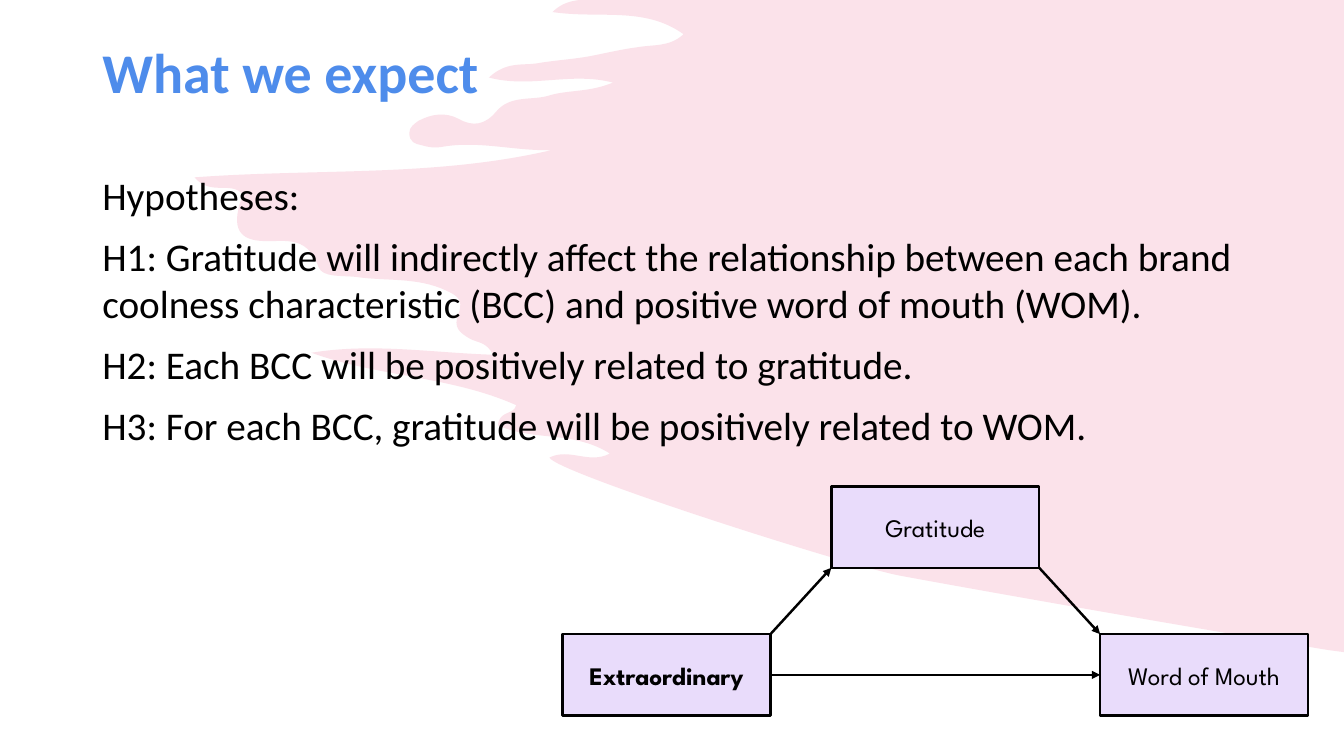
from dataclasses import dataclass

from lxml import etree
from pptx import Presentation
from pptx.dml.color import RGBColor
from pptx.enum.shapes import MSO_CONNECTOR, MSO_SHAPE
from pptx.enum.text import MSO_ANCHOR, MSO_AUTO_SIZE, PP_ALIGN
from pptx.oxml.ns import qn
from pptx.util import Inches, Pt

RECTANGLE, STRAIGHT = MSO_SHAPE.RECTANGLE, MSO_CONNECTOR.STRAIGHT
TOP, MIDDLE = MSO_ANCHOR.TOP, MSO_ANCHOR.MIDDLE
LEFT, CENTER = PP_ALIGN.LEFT, PP_ALIGN.CENTER
NO_FIT = MSO_AUTO_SIZE.NONE


@dataclass(frozen=True)
class Theme:
    heading: RGBColor = RGBColor(0x4E, 0x8C, 0xEB)
    ink: RGBColor = RGBColor(0, 0, 0)
    box: RGBColor = RGBColor(0xE9, 0xDC, 0xFB)
    brush: RGBColor = RGBColor(0xEE, 0x6E, 0x96)
    brush_alpha: int = 20000
    text_font: str = "Calibri"
    model_font: str = "League Spartan"
    heading_size: Pt = Pt(40)
    body_size: Pt = Pt(28)
    model_size: Pt = Pt(18)
    line: Pt = Pt(1.75)


theme = Theme()
prs = Presentation()
prs.slide_width, prs.slide_height = Inches(13.33), Inches(7.5)
COLUMN, ROW = prs.slide_width / 160, prs.slide_height / 90


def cells(left, top, width, height):
    """Turn a place on the 160 x 90 grid into slide lengths."""
    return (round(left * COLUMN), round(top * ROW),
            round(width * COLUMN), round(height * ROW))


def add_run(paragraph, text, font, size, color, bold=False):
    run = paragraph.add_run()
    run.text = text
    run.font.name, run.font.size, run.font.bold = font, size, bold
    run.font.color.rgb = color


slide = prs.slides.add_slide(prs.slide_layouts[5])

# Brush stroke: each curve is two control points and an end point, in inches
BRUSH_START = (5.75, 0)
BRUSH_CURVES = [
    (5.67, 0.01, 5.57, 0.03, 5.48, 0.12), (5.95, 0.19, 6.39, 0.06, 6.78, 0.34),
    (6.64, 0.47, 6.48, 0.44, 6.32, 0.47), (6.16, 0.49, 6, 0.53, 5.84, 0.56),
    (5.67, 0.59, 5.49, 0.6, 5.32, 0.63), (5.18, 0.65, 5.02, 0.61, 4.85, 0.77),
    (5.27, 0.88, 5.66, 0.71, 6.08, 0.82), (5.84, 0.92, 5.63, 0.89, 5.44, 0.95),
    (5.27, 1, 5.06, 0.94, 4.92, 1.11), (4.81, 1.24, 4.69, 1.26, 4.55, 1.18),
    (4.42, 1.11, 4.28, 1.13, 4.15, 1.2), (4.11, 1.23, 4.06, 1.26, 4.06, 1.32),
    (4.06, 1.41, 4.12, 1.43, 4.18, 1.44), (4.24, 1.46, 4.31, 1.47, 4.37, 1.46),
    (4.74, 1.39, 5.1, 1.5, 5.47, 1.49), (4.31, 1.76, 3.14, 1.67, 1.93, 1.76),
    (2.09, 1.95, 2.29, 1.79, 2.41, 1.93), (2.3, 2.22, 2.34, 2.37, 2.58, 2.39),
    (2.8, 2.41, 3.04, 2.31, 3.16, 2.65), (3.2, 2.76, 3.41, 2.73, 3.55, 2.75),
    (3.84, 2.79, 4.14, 2.75, 4.42, 2.88), (4.53, 2.93, 4.6, 2.97, 4.55, 3.11),
    (4.49, 3.25, 4.56, 3.3, 4.66, 3.36), (4.73, 3.4, 4.83, 3.39, 4.89, 3.52),
    (4.28, 3.5, 3.69, 3.4, 3.09, 3.5), (3.75, 3.74, 4.47, 3.73, 5.12, 4.02),
    (5.1, 4.12, 4.95, 4.07, 4.94, 4.22), (5.28, 4.38, 5.69, 4.27, 6.05, 4.5),
    (5.84, 4.61, 5.65, 4.44, 5.45, 4.54), (5.52, 4.69, 8.4, 5.61, 8.92, 5.71),
    (9.78, 5.87, 11.95, 6.25, 13.18, 6.45),
]
BRUSH_CORNERS = [(13.33, 6.47), (13.33, 0)]

curve_points = [point for curve in BRUSH_CURVES
                for point in zip(curve[::2], curve[1::2])]
start, *outline = [(Inches(x), Inches(y))
                   for x, y in [BRUSH_START, *curve_points, *BRUSH_CORNERS]]
builder = slide.shapes.build_freeform(*start)
builder.add_line_segments(outline, close=True)
brush = builder.convert_to_shape()
brush.shadow.inherit = False
brush.fill.solid()
brush.fill.fore_color.rgb = theme.brush
brush.line.fill.background()
brush_color = brush._element.spPr.find(qn("a:solidFill")).find(qn("a:srgbClr"))
etree.SubElement(brush_color, qn("a:alpha"), val=str(theme.brush_alpha))

# Join every three line segments of the curved edge into one Bezier curve
segments = list(brush._element.iter(qn("a:lnTo")))
for first in range(0, len(curve_points), 3):
    control, *others = segments[first:first + 3]
    for segment in others:
        control.append(segment[0])
        segment.getparent().remove(segment)
    control.tag = qn("a:cubicBezTo")
slide.shapes._spTree.insert(2, brush._element)  # behind the title

# Title
title = slide.shapes.title
title.left, title.top, title.width, title.height = cells(11, 4.8, 138, 17.4)
title.text_frame.vertical_anchor = TOP
title.text_frame.auto_size = NO_FIT
heading = title.text_frame.paragraphs[0]
heading.alignment, heading.line_spacing = LEFT, 0.9
add_run(heading, "What we expect", theme.text_font, theme.heading_size,
        theme.heading, bold=True)

# Hypotheses
HYPOTHESES = [
    "Hypotheses:",
    "H1: Gratitude will indirectly affect the relationship between each brand "
    "coolness characteristic (BCC) and positive word of mouth (WOM).",
    "H2: Each BCC will be positively related to gratitude.",
    "H3: For each BCC, gratitude will be positively related to WOM.",
]
body = slide.shapes.add_textbox(*cells(11, 19.8, 138, 67.7)).text_frame
body.word_wrap = True
for index, hypothesis in enumerate(HYPOTHESES):
    paragraph = body.add_paragraph() if index else body.paragraphs[0]
    paragraph.space_before = Pt(10)
    add_run(paragraph, hypothesis, theme.text_font, theme.body_size, theme.ink)

# Mediation model
BOX_WIDTH, BOX_HEIGHT = 24.75, 9.7
FIRST_COLUMN, COLUMN_STEP = 66.97, 32
UPPER, LOWER = 57.9, 75.5
cause, mediator, outcome = (FIRST_COLUMN + i * COLUMN_STEP for i in range(3))
VARIABLES = [
    ("Extraordinary", cause, LOWER, True),
    ("Word of Mouth", outcome, LOWER, False),
    ("Gratitude", mediator, UPPER, False),
]
for label, left, top, bold in VARIABLES:
    box = slide.shapes.add_shape(RECTANGLE, *cells(left, top, BOX_WIDTH, BOX_HEIGHT))
    box.shadow.inherit = False
    box.fill.solid()
    box.fill.fore_color.rgb = theme.box
    box.line.color.rgb, box.line.width = theme.ink, theme.line
    box.text_frame.word_wrap = True
    box.text_frame.vertical_anchor = MIDDLE
    paragraph = box.text_frame.paragraphs[0]
    paragraph.alignment = CENTER
    add_run(paragraph, label, theme.model_font, theme.model_size, theme.ink, bold)

LOWER_MIDDLE = LOWER + BOX_HEIGHT / 2
EFFECTS = [
    (cause + BOX_WIDTH, LOWER, mediator, UPPER + BOX_HEIGHT),
    (cause + BOX_WIDTH, LOWER_MIDDLE, outcome, LOWER_MIDDLE),
    (mediator + BOX_WIDTH, UPPER + BOX_HEIGHT, outcome, LOWER),
]
for effect in EFFECTS:
    arrow = slide.shapes.add_connector(STRAIGHT, *cells(*effect))
    arrow.line.color.rgb, arrow.line.width = theme.ink, theme.line
    etree.SubElement(arrow.line._get_or_add_ln(), qn("a:tailEnd"), type="triangle")
    etree.SubElement(arrow._element.spPr, qn("a:effectLst"))

prs.save("out.pptx")
